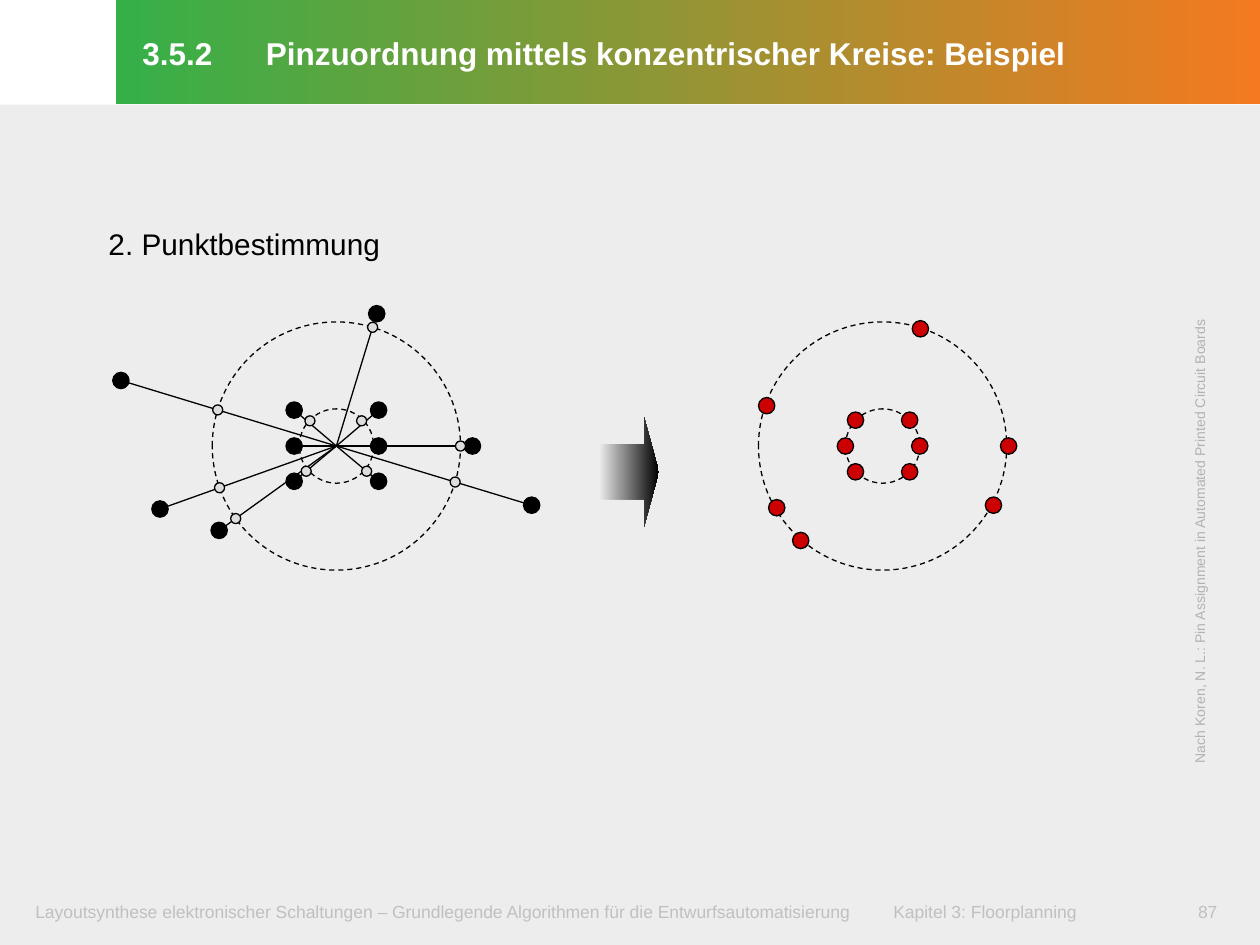
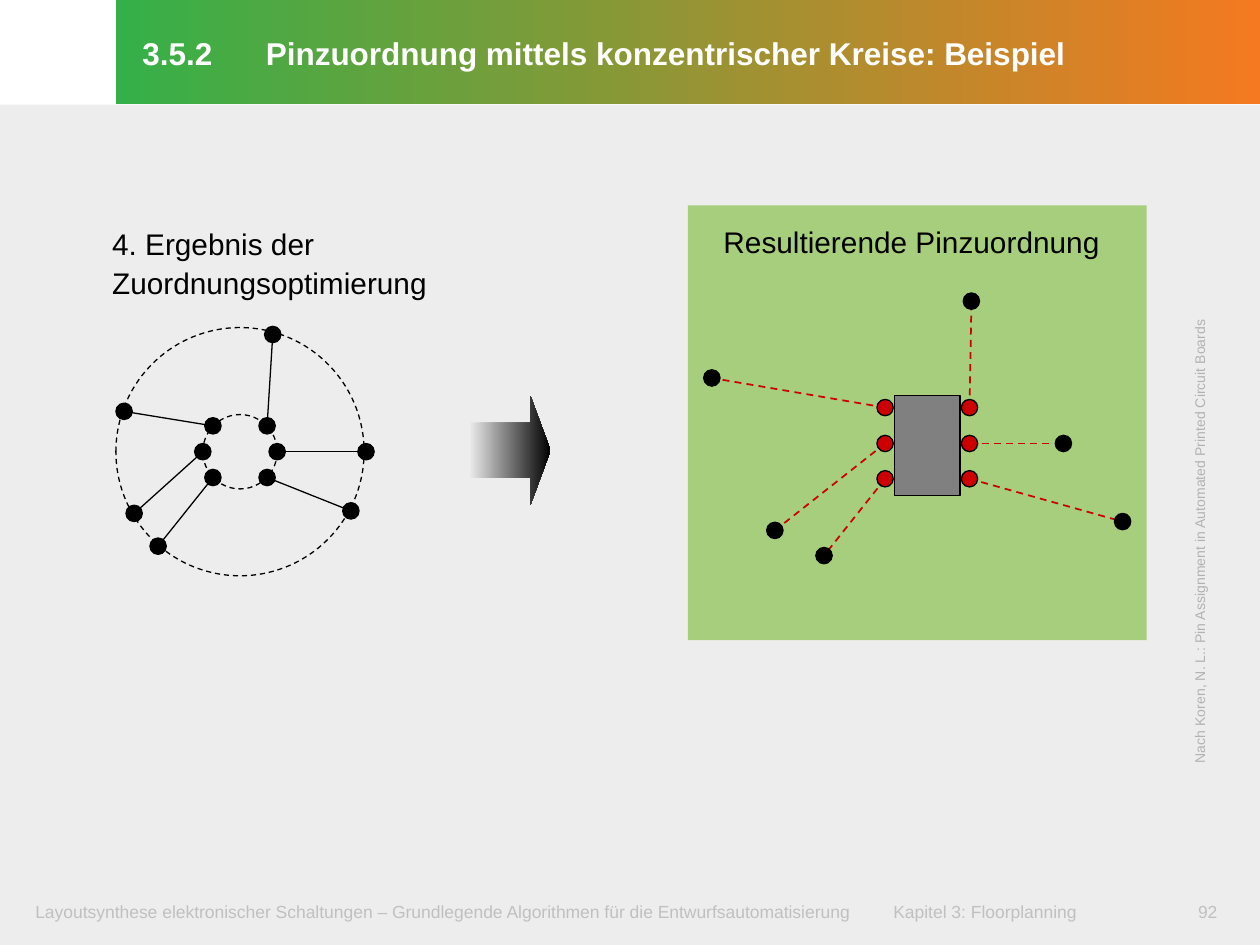
from math import hypot

from lxml import etree
from pptx import Presentation
from pptx.dml.color import RGBColor
from pptx.enum import dml, shapes, text
from pptx.oxml import ns
from pptx import util as u

WIDE, HIGH = u.Inches(10), u.Inches(7.5)
COL = WIDE / 10
KIND = shapes.MSO_SHAPE
LEFT, MID = text.PP_ALIGN.LEFT, text.PP_ALIGN.CENTER

WHITE = RGBColor(0xFF, 0xFF, 0xFF)
BLACK = RGBColor(0, 0, 0)
PAPER = RGBColor(0xED, 0xED, 0xED)
GREEN = RGBColor(0x35, 0xB0, 0x48)
ORANGE = RGBColor(0xF4, 0x79, 0x20)
FOOT = RGBColor(0xC0, 0xC0, 0xC0)
CREDIT = RGBColor(0xB2, 0xB2, 0xB2)
RED = RGBColor(0xCC, 0, 0)
PALE = RGBColor(0xDD, 0xDD, 0xDD)
MIST = RGBColor(0xEA, 0xEA, 0xEA)
BOARD = RGBColor(0xA7, 0xCE, 0x7C)
CHIP = RGBColor(0x80, 0x80, 0x80)

BIG, SMALL = 0.985, 0.295
DOT, CROSS = 0.13, 0.08

PINS = [(0.335, -0.285), (0.335, 0), (0.335, 0.28),
        (-0.335, 0.28), (-0.335, 0), (-0.335, -0.285)]
INNER = [(0.215, -0.205), (0.295, 0), (0.215, 0.205),
         (-0.215, 0.205), (-0.295, 0), (-0.215, -0.205)]
RIM = [(1, 0), (0.88, 0.47), (-0.65, 0.75), (-0.84, 0.49), (-0.92, -0.32)]
NETS = [(0.32, -1.05), (1.08, 0), (1.55, 0.47),
        (-0.93, 0.67), (-1.4, 0.5), (-1.71, -0.52)]
ENDS = [(0.35, -1.13), (1.08, 0), (1.55, 0.62),
        (-0.82, 0.89), (-1.21, 0.69), (-1.71, -0.52)]
CUTS = [(0.2, -0.2), (0.24, 0.2), (-0.24, 0.2), (-0.21, -0.2)]


def grid(*cells):
    return [int(c * COL) for c in cells]


def move(mid, points):
    return [(mid[0] + x, mid[1] + y) for x, y in points]


def pen(line, color, width, dash=False):
    line.color.rgb = color
    line.width = u.Pt(width)
    if dash:
        line.dash_style = dml.MSO_LINE.DASH


def form(slide, kind, box, fill=None, edge=None, dash=False):
    item = slide.shapes.add_shape(kind, *grid(*box))
    item.shadow.inherit = False
    if fill is None:
        item.fill.background()
    elif isinstance(fill, RGBColor):
        item.fill.solid()
        item.fill.fore_color.rgb = fill
    else:
        item.fill.gradient()
        item.fill.gradient_angle = 0
        for stop, color in zip(item.fill.gradient_stops, fill):
            stop.color.rgb = color
    if edge is None:
        item.line.fill.background()
    else:
        pen(item.line, edge, 0.75, dash)
    return item


def write(item, words, size, color, inset, align=LEFT, space=None,
          tab=None, bold=False, wrap=True):
    frame = item.text_frame
    frame.text = words
    frame.word_wrap = wrap
    if not wrap:
        frame.auto_size = text.MSO_AUTO_SIZE.SHAPE_TO_FIT_TEXT
    (frame.margin_left, frame.margin_top,
     frame.margin_right, frame.margin_bottom) = grid(*inset)
    para = frame.paragraphs[0]
    para.alignment = align
    if space:
        para.line_spacing = u.Pt(space)
    if tab:
        tabs = etree.SubElement(para._p.get_or_add_pPr(), ns.qn("a:tabLst"))
        etree.SubElement(tabs, ns.qn("a:tab"), pos=str(grid(tab)[0]), algn="l")
    for run in para.runs:
        run.font.name = "Arial"
        run.font.size = u.Pt(size)
        run.font.bold = bold
        run.font.color.rgb = color


def label(slide, box, *args, **more):
    item = slide.shapes.add_textbox(*grid(*box))
    write(item, *args, **more)
    return item


def head(slide, box, words, align=MID):
    label(slide, box, words, 17, BLACK, (0.2, 0.05, 0.09, 0.07),
          align=align, space=22.2, wrap=False)


def join(slide, start, end, color=BLACK, width=0.75, dash=False):
    item = slide.shapes.add_connector(
        shapes.MSO_CONNECTOR.STRAIGHT, *grid(*start, *end))
    pen(item.line, color, width, dash)
    etree.SubElement(item._element.spPr, ns.qn("a:effectLst"))


def dots(slide, points, fill, size=DOT, kind=KIND.FLOWCHART_CONNECTOR):
    for x, y in points:
        form(slide, kind, (x - size / 2, y - size / 2, size, size), fill, BLACK)


def rings(slide, mid):
    for r in (BIG, SMALL):
        box = (mid[0] - r, mid[1] - r, 2 * r, 2 * r)
        form(slide, KIND.OVAL, box, edge=BLACK, dash=True)


def arrow(slide, box):
    item = form(slide, KIND.RIGHT_ARROW, box, (MIST, BLACK))
    item.adjustments[0] = 0.5
    item.adjustments[1] = 0.25


def base(deck, number):
    slide = deck.slides.add_slide(deck.slide_layouts[6])
    form(slide, KIND.RECTANGLE, (0, 0.83, 10, 6.67), PAPER)
    inset = (0.12, 0.06, 0.12, 0.06)
    label(slide, (0.16, 7.09, 9.09, 0.32),
          "Layoutsynthese elektronischer Schaltungen – Grundlegende Algorithmen "
          "für die Entwurfsautomatisierung\tKapitel 3: Floorplanning",
          10, FOOT, inset, tab=6.81)
    label(slide, (9.29, 7.09, 0.59, 0.32), str(number), 10, FOOT, inset, align=MID)
    band = form(slide, KIND.RECTANGLE, (0.92, 0, 9.08, 0.83), (GREEN, ORANGE))
    band.text_frame.vertical_anchor = text.MSO_ANCHOR.MIDDLE
    write(band, "3.5.2\tPinzuordnung mittels konzentrischer Kreise: Beispiel",
          18, WHITE, (0.21, 0.05, 0.1, 0.07), space=23.5, tab=0.98, bold=True)
    side = label(slide, (7.56, 4.07, 3.93, 0.24),
                 "Nach Koren, N. L.: Pin Assignment in Automated Printed Circuit Boards",
                 8, CREDIT, (0.1, 0.05, 0.1, 0.05), wrap=False)
    side.rotation = 270
    return slide


def points(deck):
    slide = base(deck, 87)
    mid = (2.67, 3.54)
    rings(slide, mid)
    pins = move(mid, PINS + NETS)
    dots(slide, pins, BLACK)
    for pin in pins:
        join(slide, mid, pin)
    hits = [(x * BIG / hypot(x, y), y * BIG / hypot(x, y)) for x, y in NETS]
    dots(slide, move(mid, hits + CUTS), PALE, CROSS, KIND.OVAL)
    goal = (7.005, 3.54)
    rings(slide, goal)
    dots(slide, move(goal, INNER + [(0.3, -0.93)] + RIM), RED)
    arrow(slide, (4.76, 3.31, 0.47, 0.87))
    head(slide, (0.66, 1.72, 2.45, 0.43), "2. Punktbestimmung")


def result(deck):
    slide = base(deck, 92)
    form(slide, KIND.RECTANGLE, (5.46, 1.63, 3.64, 3.45), BOARD)
    chip = (7.36, 3.52)
    pins, ends = move(chip, PINS), move(chip, ENDS)
    for pin, end in zip(pins, ends):
        join(slide, pin, end, RED, 1, True)
    dots(slide, pins, RED)
    dots(slide, ends, BLACK)
    form(slide, KIND.RECTANGLE, (7.1, 3.14, 0.52, 0.79), CHIP, BLACK)
    arrow(slide, (3.73, 3.14, 0.64, 0.87))
    head(slide, (5.54, 1.7, 3.28, 0.43), "Resultierende Pinzuordnung")
    mid = (1.905, 3.585)
    inner, rim = move(mid, INNER), move(mid, [(0.26, -0.93)] + RIM)
    for start, end in zip(inner, rim):
        join(slide, start, end)
    rings(slide, mid)
    dots(slide, inner + rim, BLACK)
    head(slide, (0.69, 1.72, 4.46, 0.43),
         "4. Ergebnis der Zuordnungsoptimierung", LEFT)


def main():
    deck = Presentation()
    deck.slide_width, deck.slide_height = WIDE, HIGH
    points(deck)
    result(deck)
    deck.save("out.pptx")


if __name__ == "__main__":
    main()
